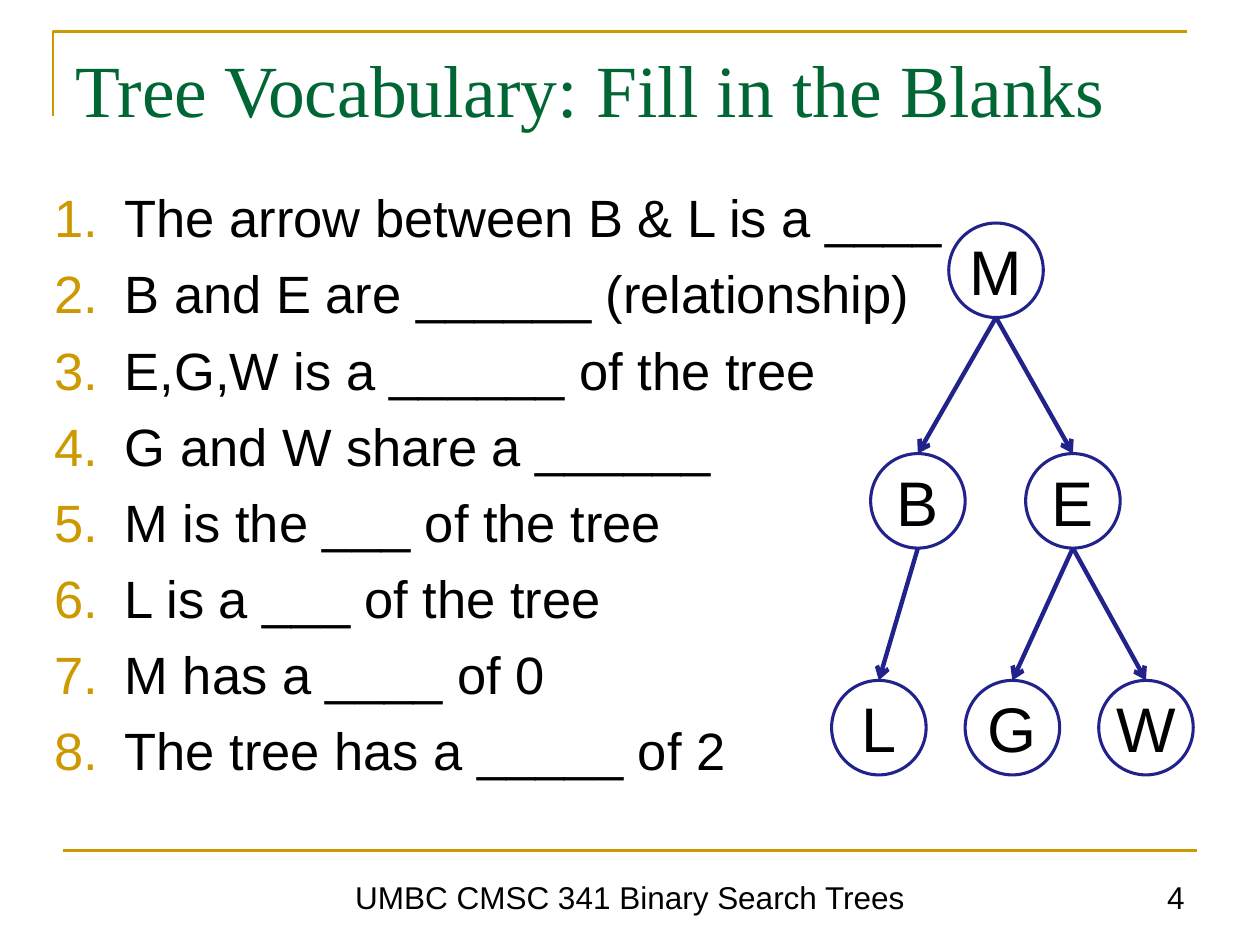
import pptx
import pptx.util
import pptx.dml.color
import pptx.enum.shapes
import pptx.enum.text
import pptx.oxml.ns
from lxml import etree

Inches, Pt = pptx.util.Inches, pptx.util.Pt
RGBColor = pptx.dml.color.RGBColor
ALIGN, ANCHOR = pptx.enum.text.PP_ALIGN, pptx.enum.text.MSO_ANCHOR
qn = pptx.oxml.ns.qn

GOLD = RGBColor(0xCC, 0x99, 0x00)
GREEN = RGBColor(0x00, 0x66, 0x33)
NAVY = RGBColor(0x22, 0x22, 0x8B)
BLACK = RGBColor(0, 0, 0)
WHITE = RGBColor(0xFF, 0xFF, 0xFF)

TITLE = "Tree Vocabulary: Fill in the Blanks"
QUESTIONS = [
    "The arrow between B & L is a ____",
    "B and E are ______ (relationship)",
    "E,G,W is a ______ of the tree",
    "G and W share a ______",
    "M is the ___ of the tree",
    "L is a ___ of the tree",
    "M has a ____ of 0",
    "The tree has a _____ of 2",
]
FOOTERS = [
    ("UMBC CMSC 341 Binary Search Trees", 1.75, 6.5, ALIGN.CENTER),
    ("4", 7.17, 2.33, ALIGN.RIGHT),
]
NODE_SIZE = 0.75
LEVEL_TOPS = [1.77, 3.6, 5.4]
NODES = {  # name: (left, level)
    "M": (7.53, 0),
    "B": (6.91, 1), "E": (8.14, 1),
    "L": (6.6, 2), "G": (7.66, 2), "W": (8.72, 2),
}
EDGES = ["BL", "MB", "EG", "ME", "EW"]


def format_text(p, size, color=BLACK, font="Arial", align=ALIGN.LEFT):
    p.alignment = align
    for r in p.runs:
        r.font.size, r.font.name = Pt(size), font
        r.font.color.rgb = color


def place(sp, left, top, width, height):
    sp.left, sp.top = Inches(left), Inches(top)
    sp.width, sp.height = Inches(width), Inches(height)
    sp.text_frame.vertical_anchor = ANCHOR.TOP
    sp.text_frame.auto_size = pptx.enum.text.MSO_AUTO_SIZE.NONE


def number(p, indent=0.56):
    """Give the paragraph a gold automatic number with a hanging indent."""
    pPr = p._p.get_or_add_pPr()
    pPr.set("marL", str(Inches(indent)))
    pPr.set("indent", str(-Inches(indent)))
    clr = etree.SubElement(pPr, qn("a:buClr"))
    etree.SubElement(clr, qn("a:srgbClr"), val=str(GOLD))
    etree.SubElement(pPr, qn("a:buFont"), typeface="+mj-lt")
    etree.SubElement(pPr, qn("a:buAutoNum"), type="arabicPeriod")


def add_line(shapes, start, end, color, width):
    line = shapes.add_connector(pptx.enum.shapes.MSO_CONNECTOR.STRAIGHT,
                                *(Inches(v) for v in start + end))
    line.line.color.rgb, line.line.width = color, Pt(width)
    etree.SubElement(line._element.spPr, qn("a:effectLst"))
    return line


def add_frame(shapes):
    fb = shapes.build_freeform(Inches(0.42), Inches(0.92))
    fb.add_line_segments([(Inches(0.42), Inches(0.25)),
                          (Inches(9.42), Inches(0.25))], close=False)
    corner = fb.convert_to_shape()
    corner.shadow.inherit = False
    corner.fill.background()
    corner.line.color.rgb, corner.line.width = GOLD, Pt(1.5)
    add_line(shapes, (0.5, 6.75), (9.5, 6.75), GOLD, 1.5)


def add_footers(shapes):
    for text, left, width, align in FOOTERS:
        sp = shapes.add_textbox(0, 0, 0, 0)
        place(sp, left, 6.83, width, 0.49)
        tf = sp.text_frame
        tf.word_wrap, tf.vertical_anchor = True, ANCHOR.BOTTOM
        tf.text = text
        format_text(tf.paragraphs[0], 18, align=align)


def add_tree(shapes):
    ovals = {}
    for name, (left, level) in NODES.items():
        sp = shapes.add_shape(pptx.enum.shapes.MSO_SHAPE.OVAL, 0, 0, 0, 0)
        place(sp, left, LEVEL_TOPS[level], NODE_SIZE, NODE_SIZE)
        sp.shadow.inherit = False
        sp.fill.solid()
        sp.fill.fore_color.rgb = WHITE
        sp.line.color.rgb, sp.line.width = NAVY, Pt(1.75)
        tf = sp.text_frame
        tf.word_wrap, tf.vertical_anchor = False, ANCHOR.MIDDLE
        tf.text = name
        format_text(tf.paragraphs[0], 36, align=ALIGN.CENTER)
        ovals[name] = sp

    for parent, child in EDGES:
        (x1, level1), (x2, level2) = NODES[parent], NODES[child]
        start = (x1 + NODE_SIZE / 2, LEVEL_TOPS[level1] + NODE_SIZE)
        end = (x2 + NODE_SIZE / 2, LEVEL_TOPS[level2])
        edge = add_line(shapes, start, end, NAVY, 2.5)
        edge.end_connect(ovals[child], 0)
        etree.SubElement(edge.line._get_or_add_ln(), qn("a:tailEnd"), type="arrow")


def main():
    prs = pptx.Presentation()
    prs.slide_width, prs.slide_height = Inches(10), Inches(7.5)
    s = prs.slides.add_slide(prs.slide_layouts[1])
    title, body = s.placeholders

    place(title, 0.5, 0.3, 8.99, 1.11)
    title.text_frame.text = TITLE
    format_text(title.text_frame.paragraphs[0], 42, GREEN, "Times New Roman")

    place(body, 0.33, 1.42, 9.16, 5.28)
    body.text_frame.text = "\n".join(QUESTIONS)
    for p in body.text_frame.paragraphs:
        format_text(p, 30)
        p.space_before = Pt(7.5)
        number(p)

    add_frame(s.shapes)
    add_footers(s.shapes)
    add_tree(s.shapes)
    prs.save("out.pptx")


if __name__ == "__main__":
    main()
